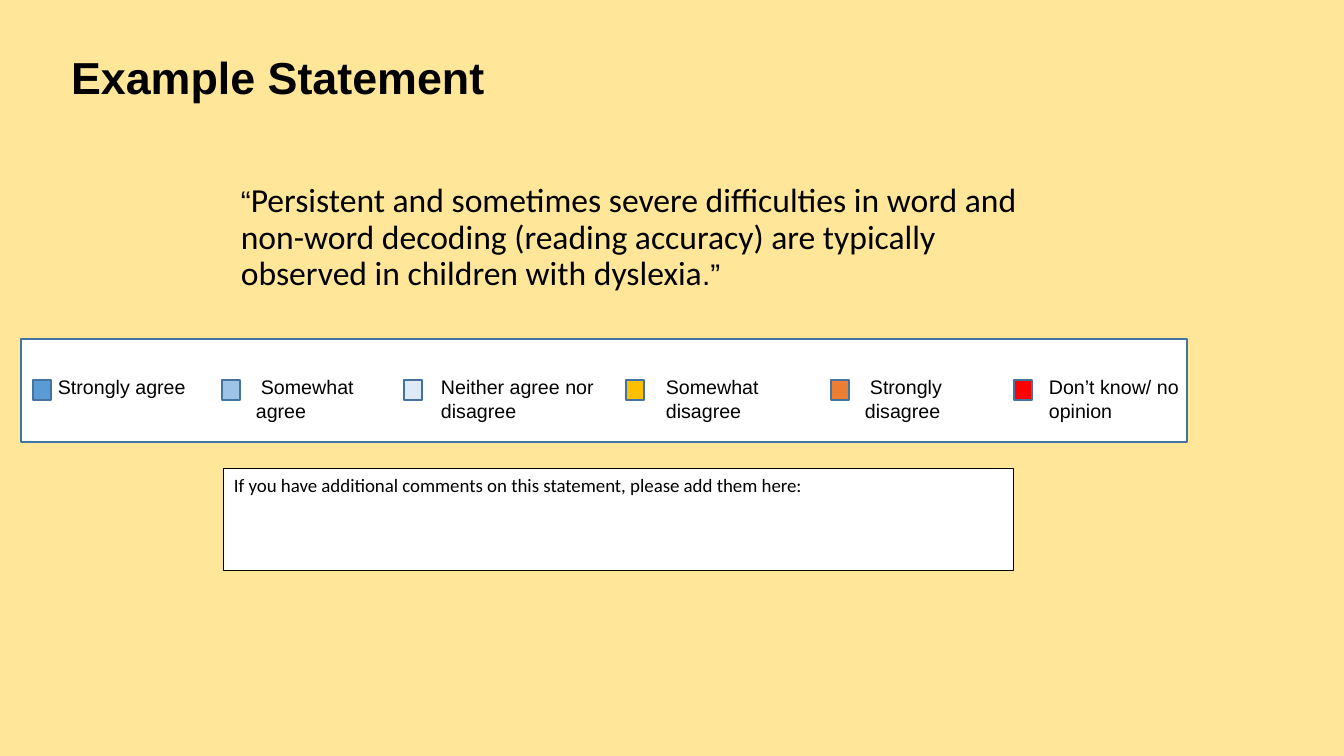
from dataclasses import dataclass

from pptx import Presentation
from pptx import util as u
from pptx.dml.color import RGBColor
from pptx.enum import shapes, text

EMU_PER_PX = 12192000 / 1344
SWATCH_TOP, SWATCH_WIDTH, SWATCH_HEIGHT = 380, 18, 20
LABEL_TOP, LABEL_HEIGHT = 370, 57


@dataclass(frozen=True)
class Answer:
    label: str
    color: str
    swatch_left: int
    label_left: int
    label_width: int = 150
    first_line: int = 0


ANSWERS = [
    Answer("Strongly agree", "5B9BD5", 33, 48),
    Answer("Somewhat agree", "9DC3E6", 222, 246, 137, 5),
    Answer("Neither agree nor disagree", "DEEBF7", 404, 431, 176),
    Answer("Somewhat disagree", "FFC000", 626, 656),
    Answer("Strongly disagree", "ED7D31", 831, 855, 136, 5),
    Answer("Don’t know/ no opinion", "FF0000", 1014, 1039, 176),
]


def px(value: int) -> u.Emu:
    return u.Emu(round(value * EMU_PER_PX))


def rgb(color: str) -> RGBColor:
    return RGBColor.from_string(color)


def add_run(paragraph, content: str, *, size: float, font: str = "Arial",
            bold: bool = False) -> None:
    run = paragraph.add_run()
    run.text = content
    run.font.size = u.Pt(size)
    run.font.name = font
    run.font.bold = bold
    run.font.color.rgb = rgb("000000")


def write(shape, content: str, *, anchor=text.MSO_ANCHOR.TOP, line_spacing: float = 1.0,
          **run_format):
    """Fill a shape with one left-aligned paragraph and return the paragraph."""
    frame = shape.text_frame
    frame.word_wrap = True
    frame.auto_size = text.MSO_AUTO_SIZE.NONE
    frame.vertical_anchor = anchor
    paragraph = frame.paragraphs[0]
    paragraph.alignment = text.PP_ALIGN.LEFT
    paragraph.line_spacing = line_spacing
    add_run(paragraph, content, **run_format)
    return paragraph


def add_box(slide, left: int, top: int, width: int, height: int, *, fill: str,
            line: str = "43739E", line_width: float = 1):
    box = slide.shapes.add_shape(shapes.MSO_SHAPE.RECTANGLE,
                                 px(left), px(top), px(width), px(height))
    box.shadow.inherit = False
    box.fill.solid()
    box.fill.fore_color.rgb = rgb(fill)
    box.line.color.rgb = rgb(line)
    box.line.width = u.Pt(line_width)
    return box


def add_textbox(slide, left: int, top: int, width: int, height: int):
    return slide.shapes.add_textbox(px(left), px(top), px(width), px(height))


def add_answer(slide, answer: Answer) -> None:
    add_box(slide, answer.swatch_left, SWATCH_TOP, SWATCH_WIDTH, SWATCH_HEIGHT,
            fill=answer.color)
    label = add_textbox(slide, answer.label_left, LABEL_TOP, answer.label_width, LABEL_HEIGHT)
    paragraph = write(label, answer.label, size=14)
    if answer.first_line:
        paragraph._p.get_or_add_pPr().set("indent", str(px(answer.first_line)))


def add_title(slide) -> None:
    title = slide.shapes.title
    title.left, title.top, title.width, title.height = px(61), px(7), px(983), px(146)
    write(title, "Example Statement", anchor=text.MSO_ANCHOR.MIDDLE, line_spacing=0.9,
          size=32, bold=True)


def add_statement(slide) -> None:
    statement = add_textbox(slide, 219, 179, 851, 132)
    paragraph = write(statement, "“", line_spacing=0.9, size=21.3)
    paragraph._p.get_or_add_pPr().set("marL", str(px(12)))
    add_run(paragraph, "Persistent and sometimes severe difficulties in word and non-word "
            "decoding (reading accuracy) are typically observed in children with dyslexia",
            size=24, font="Calibri")
    add_run(paragraph, ".”", size=21.3)


def main() -> None:
    presentation = Presentation()
    presentation.slide_width, presentation.slide_height = px(1344), px(756)
    slide = presentation.slides.add_slide(presentation.slide_layouts[5])
    slide.background.fill.solid()
    slide.background.fill.fore_color.rgb = rgb("FFE699")

    add_title(slide)
    add_statement(slide)
    add_box(slide, 21, 339, 1166, 103, fill="FFFFFF")
    for answer in ANSWERS:
        add_answer(slide, answer)
    comments = add_box(slide, 224, 469, 790, 102, fill="FFFFFF", line="000000",
                       line_width=0.75)
    write(comments, "If you have additional comments on this statement, please add them here:",
          size=13.5, font="Calibri")
    presentation.save("out.pptx")


if __name__ == "__main__":
    main()
